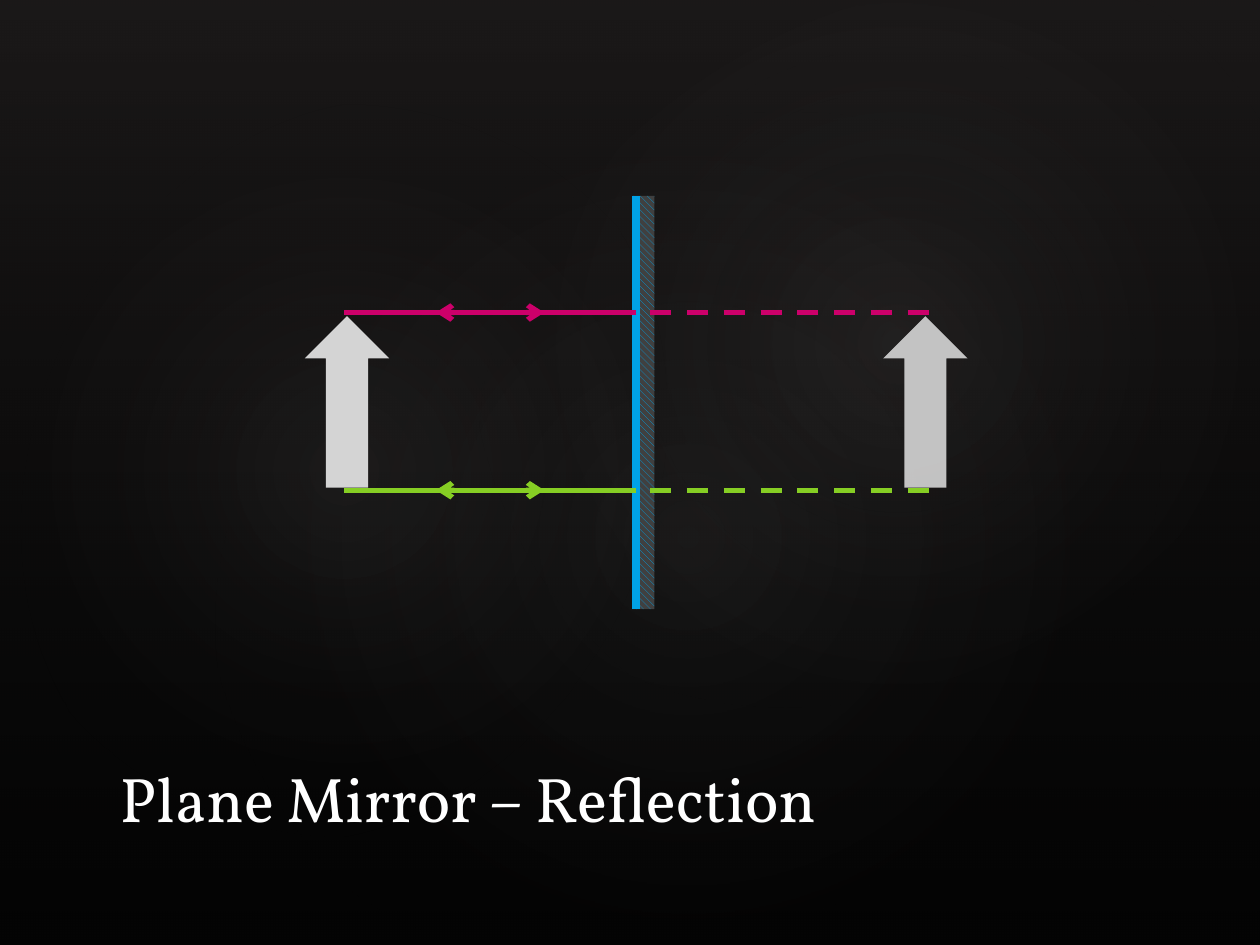
from dataclasses import dataclass

import pptx
from lxml import etree
from pptx import util as u
from pptx.dml.color import RGBColor
from pptx.enum import dml, shapes, text
from pptx.oxml import ns

BLACK = RGBColor(0x00, 0x00, 0x00)
WHITE = RGBColor(0xFF, 0xFF, 0xFF)
DARK = RGBColor(0x28, 0x28, 0x28)
HAZE = RGBColor(0x4B, 0x45, 0x45)
GLOW = RGBColor(0xBF, 0xB9, 0xB9)
BACKING = RGBColor(0x40, 0x40, 0x40)
BLUE = RGBColor(0x00, 0xA2, 0xE6)
SILVER = RGBColor(0xD4, 0xD4, 0xD4)
MAGENTA = RGBColor(0xCC, 0x00, 0x6A)
GREEN = RGBColor(0x86, 0xCE, 0x24)

WIDTH, HEIGHT = 720, 540
MIRROR_X = 363.6
FONT = "Vollkorn"


@dataclass
class Area:
    left: float
    top: float
    width: float
    height: float
    rotation: float = 0


@dataclass
class Stop:
    position: int
    color: RGBColor
    opacity: int


@dataclass
class Segment:
    start: float
    end: float
    dashed: bool = False
    arrow: bool = False


GLOWS = [
    (Area(108, 82.1, 570.2, 449.3, 328.7), 7),
    (Area(-21.6, 92.2, 436.3, 352.8, 294.3), 8),
    (Area(257.8, 9.4, 510.5, 374.4, 328.7), 8),
]
RAY_PATH = [
    Segment(371.5, 537.8, dashed=True),
    Segment(MIRROR_X, 249.1, arrow=True),
    Segment(196.6, 362.5),
    Segment(222.5, 311, arrow=True),
]
RAYS = [(178.6, MAGENTA), (280.1, GREEN)]
ARROWS = [(174.2, 100), (504.7, 91)]


def add_child(parent, tag: str, **attributes):
    return etree.SubElement(parent, ns.qn(tag), **attributes)


def add_plain_shape(page, kind, area: Area):
    shape = page.shapes.add_shape(
        kind, u.Pt(area.left), u.Pt(area.top), u.Pt(area.width), u.Pt(area.height)
    )
    shape.rotation = area.rotation
    shape.shadow.inherit = False
    shape.line.fill.background()
    return shape


def set_gradient(shape, stops: list[Stop], radial: bool) -> None:
    shape.fill.background()
    blank = shape.element.spPr.find(ns.qn("a:noFill"))
    gradient = etree.Element(ns.qn("a:gradFill"), rotWithShape="1")
    stop_list = add_child(gradient, "a:gsLst")
    for stop in stops:
        entry = add_child(stop_list, "a:gs", pos=str(stop.position * 1000))
        color = add_child(entry, "a:srgbClr", val=str(stop.color))
        add_child(color, "a:alpha", val=str(stop.opacity * 1000))
    if radial:
        focus = add_child(gradient, "a:path", path="circle")
        add_child(focus, "a:fillToRect", l="50000", t="50000", r="50000", b="50000")
    else:
        add_child(gradient, "a:lin", ang="5400000", scaled="0")
    blank.getparent().replace(blank, gradient)


def add_line(page, start: tuple, end: tuple, color: RGBColor, weight: float):
    line = page.shapes.add_connector(
        shapes.MSO_CONNECTOR.STRAIGHT, *(u.Pt(value) for value in (*start, *end))
    )
    line.line.color.rgb = color
    line.line.width = u.Pt(weight)
    add_child(line.element.spPr, "a:effectLst")
    return line


def add_ray(page, y: float, color: RGBColor) -> None:
    for segment in RAY_PATH:
        line = add_line(page, (segment.start, y), (segment.end, y), color, 3)
        if segment.dashed:
            line.line.dash_style = dml.MSO_LINE.DASH
        if segment.arrow:
            add_child(line.line._get_or_add_ln(), "a:tailEnd", type="arrow")


def add_backdrop(page) -> None:
    page.background.fill.solid()
    page.background.fill.fore_color.rgb = BLACK
    haze = add_plain_shape(page, shapes.MSO_SHAPE.RECTANGLE, Area(0, 0, WIDTH, HEIGHT))
    set_gradient(haze, [Stop(0, HAZE, 36), Stop(100, DARK, 10)], radial=False)
    for area, opacity in GLOWS:
        glow = add_plain_shape(page, shapes.MSO_SHAPE.OVAL, area)
        set_gradient(glow, [Stop(0, GLOW, opacity), Stop(58, DARK, 0)], radial=True)


def add_mirror(page) -> None:
    backing = add_plain_shape(
        page, shapes.MSO_SHAPE.RECTANGLE, Area(249.8, 223.9, 236.2, 12.2, 270)
    )
    backing.fill.patterned()
    backing.fill.pattern = dml.MSO_PATTERN.WIDE_DOWNWARD_DIAGONAL
    backing.fill.fore_color.rgb = BLUE
    backing.fill.back_color.rgb = BACKING
    add_line(page, (MIRROR_X, 348.2), (MIRROR_X, 111.9), BLUE, 4.5)


def add_object_arrow(page, left: float, opacity: int) -> None:
    arrow = add_plain_shape(
        page, shapes.MSO_SHAPE.UP_ARROW, Area(left, 180.7, 48.2, 97.9)
    )
    arrow.fill.solid()
    arrow.fill.fore_color.rgb = SILVER
    if opacity < 100:
        color = arrow.element.spPr.find(ns.qn("a:solidFill"))[0]
        add_child(color, "a:alpha", val=str(opacity * 1000))


def set_title(page) -> None:
    title = page.shapes.title
    title.left, title.top = u.Pt(61.2), u.Pt(430.6)
    title.width, title.height = u.Pt(594), u.Pt(50.4)
    title.text_frame.text = "Plane Mirror – Reflection"
    title.text_frame.vertical_anchor = text.MSO_ANCHOR.BOTTOM
    title.text_frame.auto_size = text.MSO_AUTO_SIZE.NONE
    para = title.text_frame.paragraphs[0]
    para.alignment = text.PP_ALIGN.LEFT
    para.font.name = FONT
    para.font.size = u.Pt(36)
    para.font.color.rgb = WHITE
    title.element.getparent().append(title.element)


def main() -> None:
    deck = pptx.Presentation()
    deck.slide_width, deck.slide_height = u.Pt(WIDTH), u.Pt(HEIGHT)
    page = deck.slides.add_slide(deck.slide_layouts.get_by_name("Title Only"))
    add_backdrop(page)
    set_title(page)
    add_mirror(page)
    for left, opacity in ARROWS:
        add_object_arrow(page, left, opacity)
    for y, color in RAYS:
        add_ray(page, y, color)
    deck.save("out.pptx")


if __name__ == "__main__":
    main()
